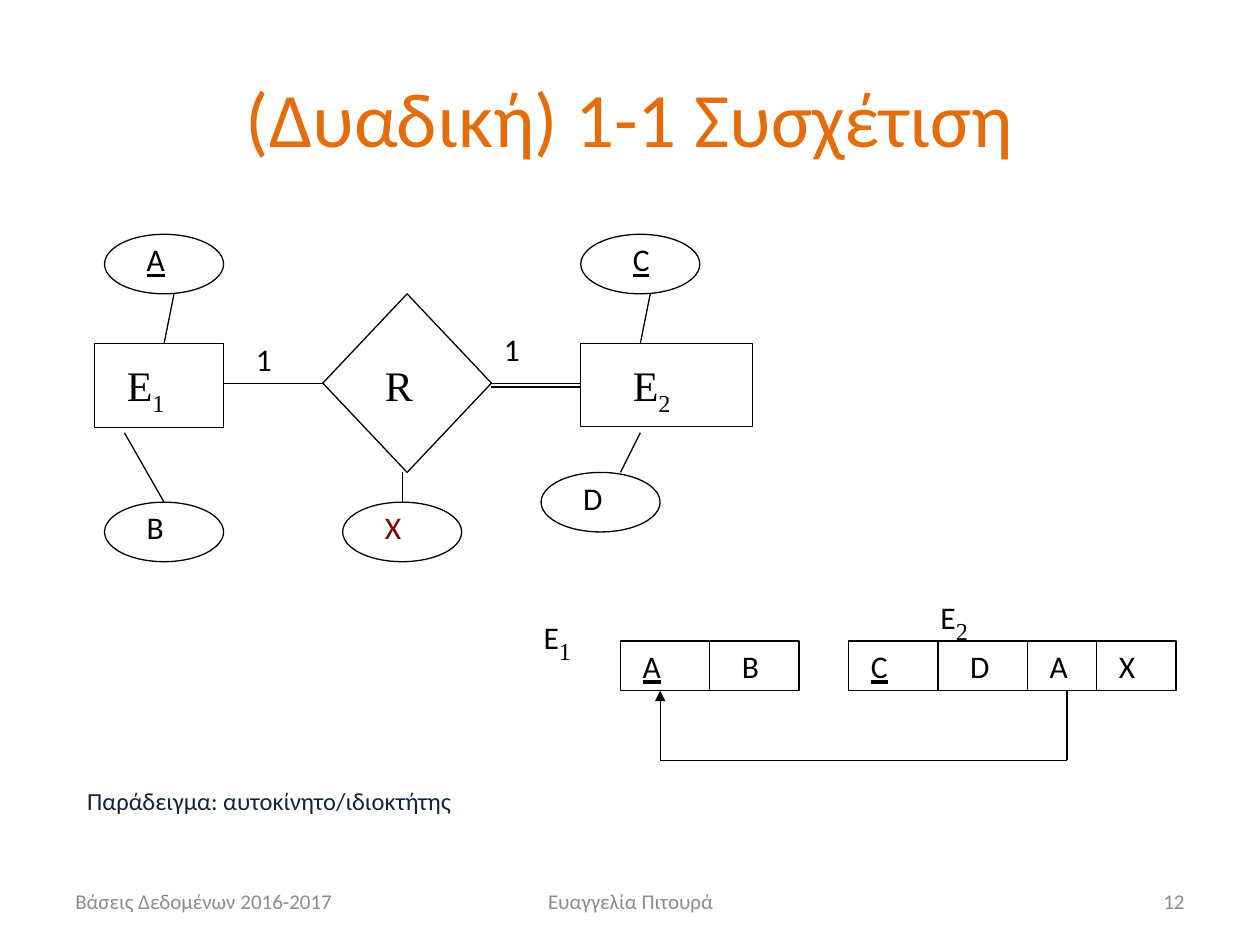
from lxml.etree import SubElement
from pptx import Presentation
from pptx.dml.color import RGBColor
from pptx.enum.shapes import MSO_CONNECTOR, MSO_SHAPE
from pptx.enum.text import MSO_ANCHOR, PP_ALIGN
from pptx.oxml.ns import qn
from pptx.util import Inches, Pt

BLACK = RGBColor(0x00, 0x00, 0x00)
ORANGE = RGBColor(0xE4, 0x6C, 0x0A)
GRAY = RGBColor(0x8C, 0x8C, 0x8C)
MAROON = RGBColor(0x80, 0x00, 0x00)
NAVY = RGBColor(0x0F, 0x24, 0x3E)

SLIDE_WIDTH, SLIDE_HEIGHT = Inches(10), Inches(7.5)

# Diagram grid: origin at the first ellipse, square cells of 2 mm
LEFT, TOP, CELL = 0.83, 1.86, 1 / 12.7
TOP_LEFT_ROW, ENTITY_ROW, LINK_ROW, TABLE_ROW = 0, 11, 15, 41
TABLE_HEIGHT = 5

LABEL = {"name": "Calibri", "size": Pt(18)}
KEY = {**LABEL, "underline": True}
SERIF = {"name": "Times New Roman", "size": Pt(24)}
FOOTER = {"name": "Calibri", "size": Pt(12)}


def across(column):
    return Inches(LEFT + column * CELL)


def down(row):
    return Inches(TOP + row * CELL)


def grid_area(column, row, columns, rows):
    return across(column), down(row), Inches(columns * CELL), Inches(rows * CELL)


def share_area(left, top, width, height):
    return (int(left * SLIDE_WIDTH), int(top * SLIDE_HEIGHT),
            int(width * SLIDE_WIDTH), int(height * SLIDE_HEIGHT))


def add_text(page, area, text, style, color=BLACK, subscript="", subscript_style=SERIF,
             align=PP_ALIGN.LEFT, anchor=MSO_ANCHOR.TOP):
    frame = page.shapes.add_textbox(*area).text_frame
    frame.word_wrap = True
    frame.vertical_anchor = anchor
    para = frame.paragraphs[0]
    para.alignment = align
    for content, values in ((text, style), (subscript, subscript_style)):
        if not content:
            continue
        span = para.add_run()
        span.text = content
        for name, value in values.items():
            setattr(span.font, name, value)
        span.font.color.rgb = color
        if content == subscript:
            span.font._element.set("baseline", "-25000")


def add_label(page, column, row, text, style=LABEL, **options):
    add_text(page, grid_area(column, row, 9, 5), text, style, **options)


def add_outline(page, kind, *cells):
    box = page.shapes.add_shape(kind, *grid_area(*cells))
    box.shadow.inherit = False
    box.fill.background()
    box.line.color.rgb = BLACK
    box.line.width = Pt(0.75)
    return box


def add_line(page, start, end, arrow=False):
    line = page.shapes.add_connector(MSO_CONNECTOR.STRAIGHT, across(start[0]), down(start[1]),
                                     across(end[0]), down(end[1]))
    line.line.color.rgb = BLACK
    line.line.width = Pt(0.75)
    if arrow:
        SubElement(line.line._get_or_add_ln(), qn("a:tailEnd"), type="triangle")
    SubElement(line._element.spPr, qn("a:effectLst"))
    return line


def add_attribute(page, column, row, text, indent=3, style=LABEL, color=BLACK):
    ellipse = add_outline(page, MSO_SHAPE.OVAL, column, row, 12, 6)
    add_label(page, column + indent, row, text, style, color=color)
    return ellipse


def add_relation(page, column, columns, dividers, fields):
    add_outline(page, MSO_SHAPE.RECTANGLE, column, TABLE_ROW, columns, TABLE_HEIGHT)
    for divider in dividers:
        add_line(page, (divider, TABLE_ROW), (divider, TABLE_ROW + TABLE_HEIGHT))
    for position, text, style in fields:
        add_label(page, position, TABLE_ROW, text, style)


def add_entity_diagram(page):
    # Entities and the relationship between them
    add_outline(page, MSO_SHAPE.FLOWCHART_PROCESS, -1, ENTITY_ROW, 13, 8.5)
    add_outline(page, MSO_SHAPE.FLOWCHART_PROCESS, 48, ENTITY_ROW, 17.3, 8.4)
    relationship = add_outline(page, MSO_SHAPE.FLOWCHART_DECISION, 22, 6, 17, 18)
    for column, text, subscript in ((1, "E", "1"), (27, "R", ""), (52, "E", "2")):
        add_label(page, column, ENTITY_ROW + 1, text, SERIF, subscript=subscript)

    # Single link on the left, double link on the right
    add_line(page, (12, LINK_ROW), (22, LINK_ROW)).end_connect(relationship, 1)
    add_line(page, (39, LINK_ROW), (48, LINK_ROW)).begin_connect(relationship, 3)
    add_line(page, (39, LINK_ROW + 0.4), (48, LINK_ROW + 0.4))
    add_label(page, 14, 10, "1")
    add_label(page, 39, 9, "1")

    # Attributes
    add_attribute(page, 0, TOP_LEFT_ROW, "A", style=KEY)
    add_attribute(page, 48, TOP_LEFT_ROW, "C", indent=4, style=KEY)
    add_attribute(page, 0, 27, "B")
    add_attribute(page, 44, 24, "D")
    add_attribute(page, 24, 27, "X", color=MAROON)
    for start, end in (((7, 6), (6, 11)), ((55, 6), (54, 11)), ((2, 20), (6, 27)),
                       ((54, 20), (52, 24)), ((30, 24), (30, 27))):
        add_line(page, start, end)


def add_relational_schema(page):
    add_label(page, 43, 37, "E", subscript="1")
    add_relation(page, 52, 18, [61], [(53, "A", KEY), (63, "B", LABEL)])
    add_label(page, 83, 35, "E", subscript="2")
    add_relation(page, 75, 33, [84, 93, 100],
                 [(76, "C", KEY), (86, "D", LABEL), (94, "A", LABEL), (101, "X", LABEL)])

    # Foreign key from the second relation to the first
    bottom = TABLE_ROW + TABLE_HEIGHT
    corners = [(97, bottom), (97, bottom + 7), (56, bottom + 7), (56, bottom)]
    for start, end in zip(corners, corners[1:]):
        add_line(page, start, end, arrow=end == corners[-1])


def add_footer(page):
    for left, width, text, align in (
            (0.05, 0.233, "Βάσεις Δεδομένων 2016-2017", PP_ALIGN.LEFT),
            (0.342, 0.317, "Ευαγγελία Πιτουρά", PP_ALIGN.CENTER),
            (0.717, 0.233, "12", PP_ALIGN.RIGHT)):
        add_text(page, share_area(left, 0.927, width, 0.053), text, FOOTER, GRAY,
                 align=align, anchor=MSO_ANCHOR.MIDDLE)


def main():
    deck = Presentation()
    deck.slide_width, deck.slide_height = SLIDE_WIDTH, SLIDE_HEIGHT
    page = deck.slides.add_slide(deck.slide_layouts[6])

    # Title
    add_text(page, share_area(0.05, 0.04, 0.9, 0.167), "(Δυαδική) 1-1 Συσχέτιση",
             {"name": "Calibri", "size": Pt(44)}, ORANGE,
             align=PP_ALIGN.CENTER, anchor=MSO_ANCHOR.MIDDLE)
    add_entity_diagram(page)
    add_relational_schema(page)
    # Example
    add_text(page, grid_area(-3, 55, 53.6, 4.3), "Παράδειγμα: αυτοκίνητο/ιδιοκτήτης",
             {"name": "Calibri", "size": Pt(14)}, NAVY)
    add_footer(page)
    deck.save("out.pptx")


if __name__ == "__main__":
    main()
